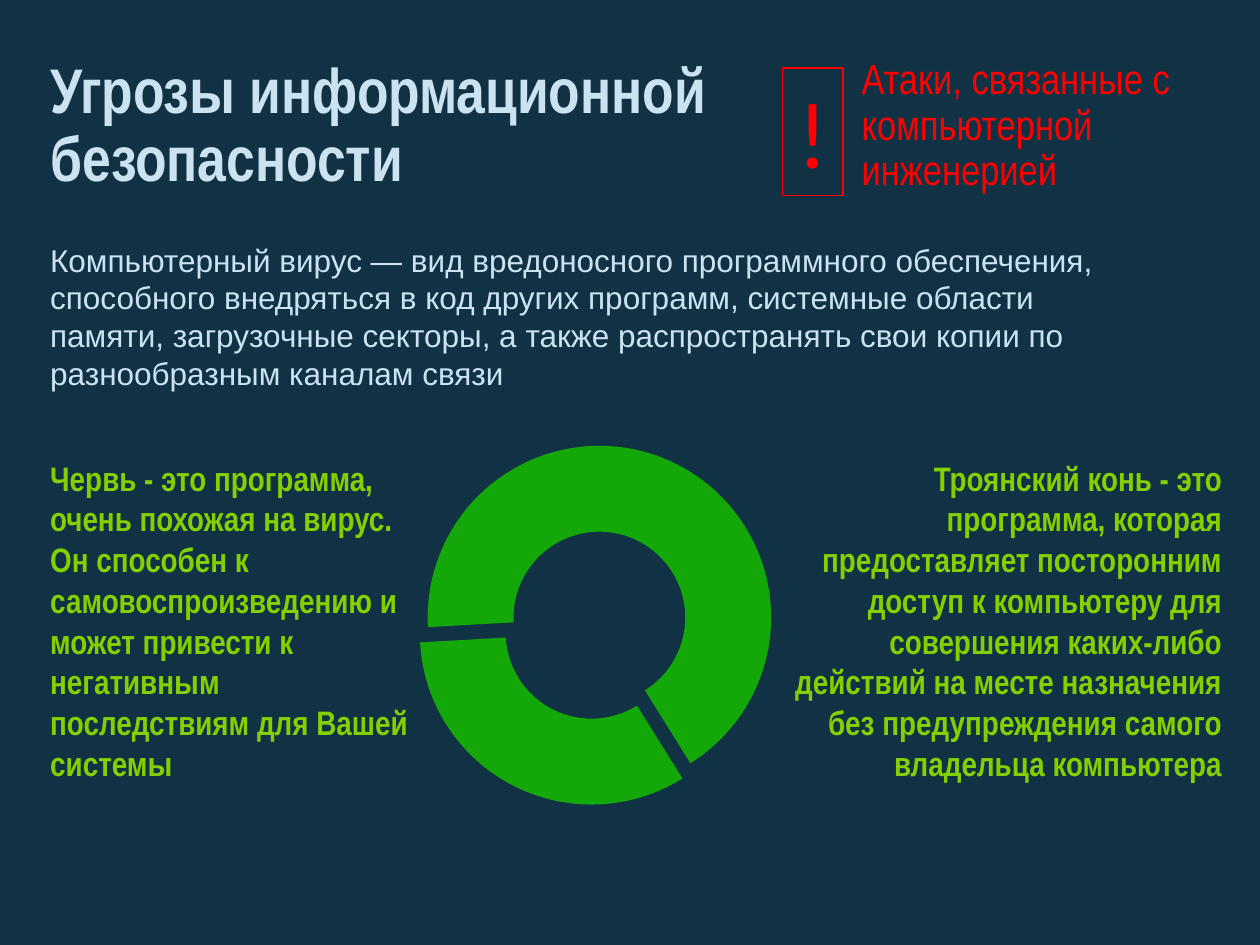
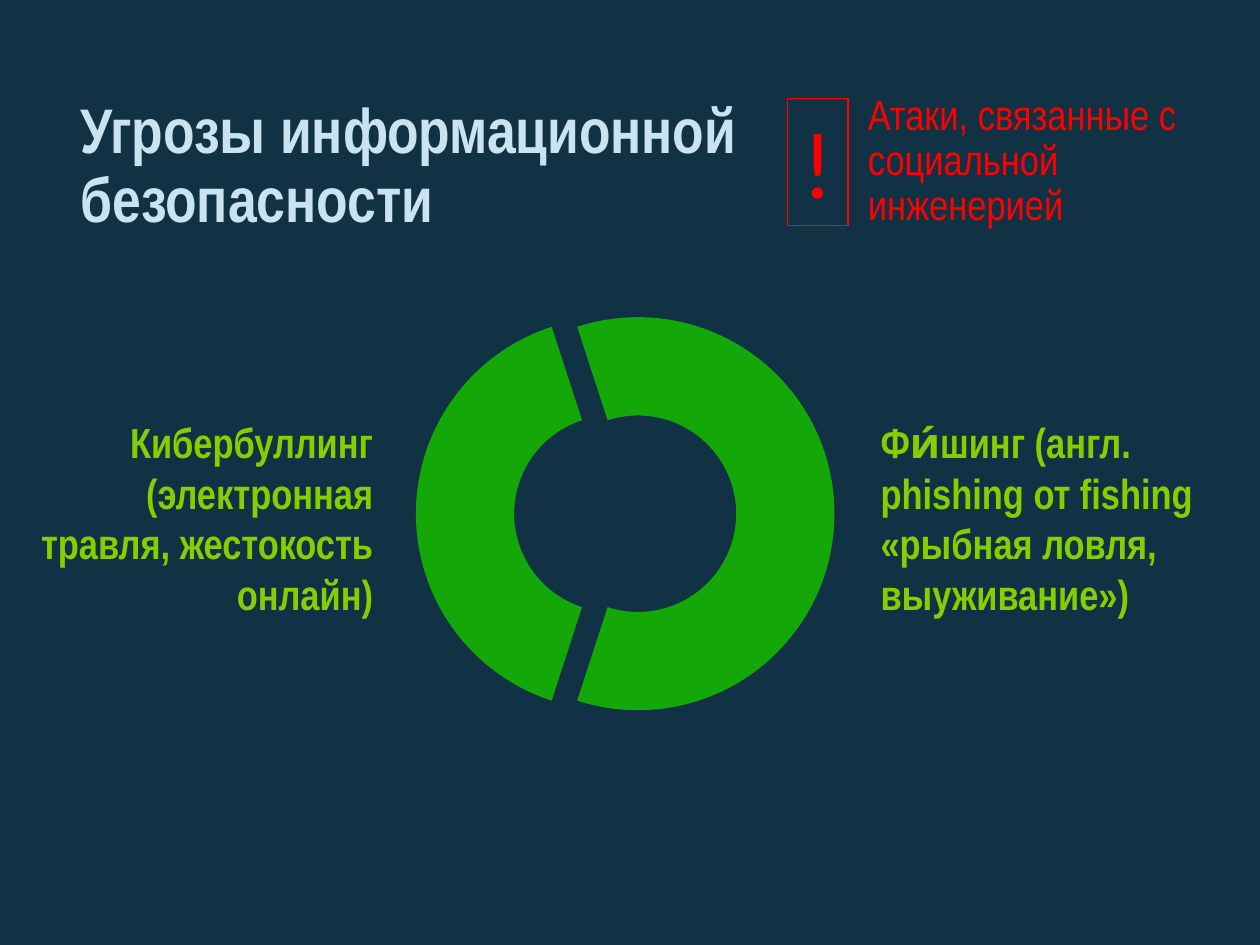
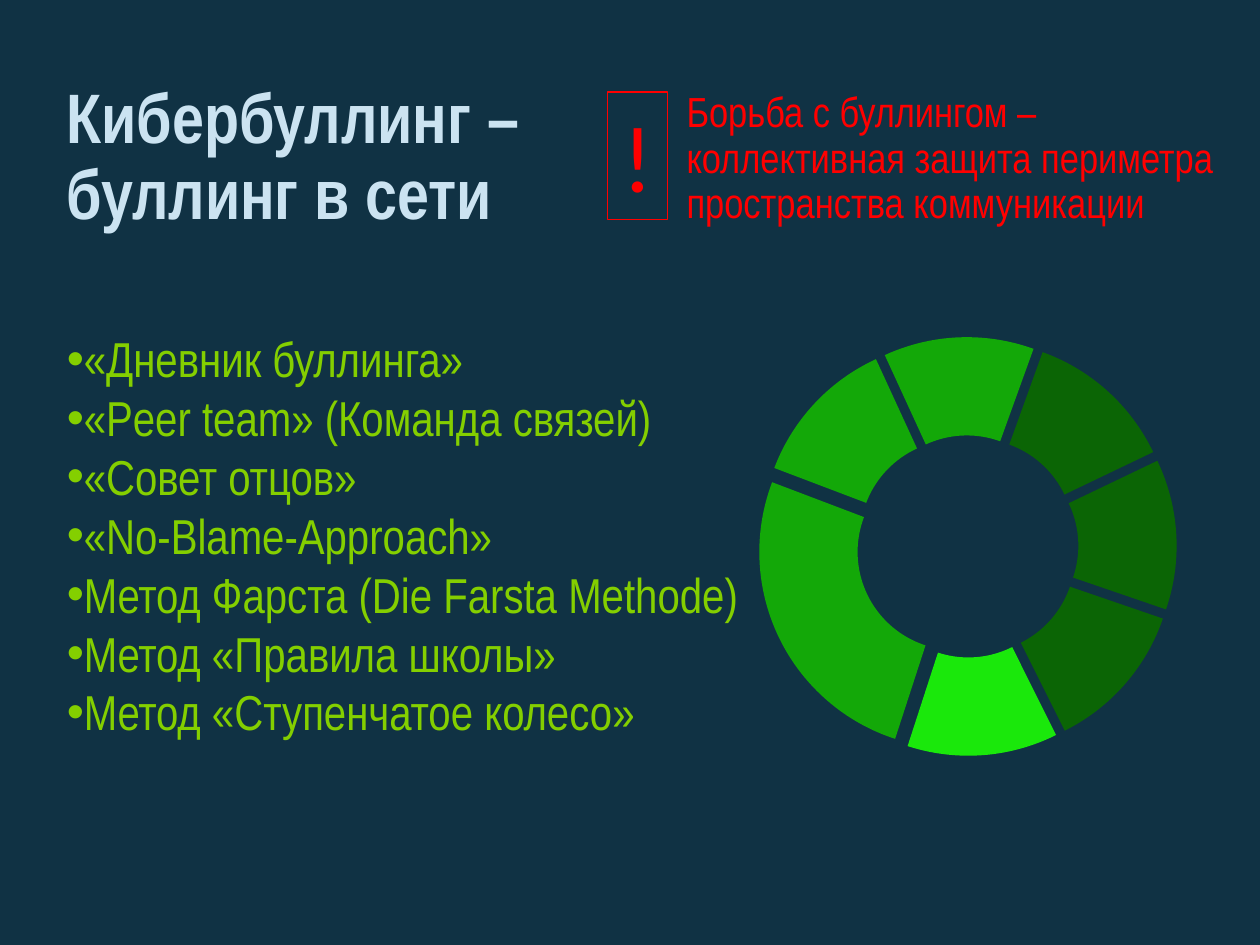
from lxml.etree import SubElement
from pptx import Presentation
from pptx.chart.data import CategoryChartData
from pptx.dml.color import RGBColor
from pptx.enum.chart import XL_CHART_TYPE as ChartType
from pptx.enum.shapes import MSO_SHAPE as Shape
from pptx.enum.text import MSO_ANCHOR as Anchor, MSO_AUTO_SIZE as AutoSize, PP_ALIGN as Align
from pptx.oxml.ns import qn
from pptx.util import Inches, Pt

NAVY = RGBColor(0x10, 0x32, 0x44)
PALE_BLUE = RGBColor(0xCB, 0xE3, 0xF1)
RED = RGBColor(0xFF, 0x00, 0x00)
LIME = RGBColor(0x84, 0xCF, 0x00)
WHITE = RGBColor(0xFF, 0xFF, 0xFF)
GREEN = RGBColor(0x13, 0xA8, 0x08)
DARK_GREEN = RGBColor(0x0B, 0x65, 0x05)
BRIGHT_GREEN = RGBColor(0x1A, 0xE8, 0x0B)

NARROW = "Arial Narrow"
NO_BREAK_SPACE = chr(160)
TITLE_ONLY, TITLE_AND_CONTENT = 5, 1
THREATS = "Угрозы информационной безопасности"

# Boxes are left, top, width, height in inches.
SLIDES = [
    {
        "title": (THREATS, (0.3, 0.42, 5.59, 1.25), 36),
        "notice": ("Атаки, связанные с компьютерной инженерией", (6.45, 0.41, 3.35, 1.19)),
        "mark": (6.21, 0.54),
        "intro": (
            "Компьютерный вирус — вид вредоносного программного обеспечения, "
            "способного внедряться в код других программ, системные области "
            f"памяти,{NO_BREAK_SPACE}загрузочные секторы, а также распространять "
            "свои копии по разнообразным каналам связи",
            (0.3, 1.86, 9.34, 1.31),
        ),
        "definitions": [
            (["Червь - это программа, очень похожая на вирус. Он способен к "
              "самовоспроизведению и может привести к негативным последствиям "
              "для Вашей системы"], (0.3, 3.58, 3.12, 2.71), 19.4, Align.LEFT),
            (["Троянский конь - это программа, которая предоставляет посторонним "
              "доступ к компьютеру для совершения каких-либо действий на месте "
              "назначения без предупреждения самого владельца компьютера"],
             (6.21, 3.58, 3.59, 2.71), 19.4, Align.RIGHT),
        ],
        "ring": {
            "box": (2.78, 3.31, 4.48, 3.27), "plot": (0.115, 0.026),
            "values": [33, 67, None, None],
            "colors": [GREEN, GREEN, GREEN, DARK_GREEN],
            "hole": 49, "start": 148, "explosion": 10,
        },
    },
    {
        "title": (THREATS, (0.54, 0.74, 5.59, 1.25), 36),
        "notice": ("Атаки, связанные с социальной инженерией", (6.5, 0.69, 3.08, 1.19)),
        "mark": (6.25, 0.78),
        "definitions": [
            (["Кибербуллинг (электронная "
              f"травля,{NO_BREAK_SPACE}жестокость онлайн)"],
             (-0.01, 3.26, 3.07, 1.72), 24, Align.RIGHT),
            (["Фи́шинг (англ.", "phishing от fishing", "«рыбная ловля, выуживание»)"],
             (6.89, 3.26, 2.88, 1.72), 24, Align.LEFT),
        ],
        "ring": {
            "box": (2.37, 2.1, 5.2, 3.8), "plot": (0.179, 0.073),
            "values": [40, 60, None, None],
            "colors": [GREEN, GREEN, GREEN, DARK_GREEN],
            "hole": 46, "start": 198, "explosion": 13,
        },
    },
    {
        "title": ("Кибербуллинг –\vбуллинг в сети", (0.43, 0.61, 4.42, 1.25), 40),
        "notice": ("Борьба с буллингом – коллективная защита периметра "
                   "пространства коммуникации", (5.06, 0.67, 4.78, 1.19)),
        "mark": (4.82, 0.73),
        "methods": (
            ["«Дневник буллинга»", "«Peer team» (Команда связей)", "«Совет отцов»",
             "«No-Blame-Approach»", "Метод Фарста (Die Farsta Methode)",
             "Метод «Правила школы»", "Метод «Ступенчатое колесо»"],
            (0.43, 2.56, 5.95, 3.4),
        ),
        "ring": {
            "box": (5.07, 2.36, 5.2, 3.8), "plot": (0.182, 0.062),
            "values": [25] + [12] * 6,
            "colors": [GREEN] * 3 + [DARK_GREEN] * 3 + [BRIGHT_GREEN],
            "hole": 46, "start": 198, "explosion": 13,
        },
    },
]


def place(shape, box):
    shape.left, shape.top, shape.width, shape.height = map(Inches, box)


def write(shape, lines, size, color, name=NARROW, bold=False, align=Align.LEFT,
          spacing=1.0, anchor=Anchor.TOP, indent=None, bullet=None):
    frame = shape.text_frame
    frame.word_wrap = True
    frame.auto_size = AutoSize.NONE
    frame.vertical_anchor = anchor
    frame.text = "\n".join(lines)
    for paragraph in frame.paragraphs:
        paragraph.alignment = align
        paragraph.line_spacing = spacing
        paragraph.space_before = Pt(0)
        properties = paragraph._p.get_or_add_pPr()
        if indent is not None:
            properties.set("marL", str(Inches(indent)))
            properties.set("indent", "0")
        if bullet:
            SubElement(properties, qn("a:buChar"), char=bullet)
        font = paragraph.font
        font.name, font.size, font.bold = name, Pt(size), bold
        font.color.rgb = color


def add_text(slide, lines, box, size, color, **style):
    write(slide.shapes.add_textbox(*map(Inches, box)), lines, size, color, **style)


def add_mark(slide, position):
    mark = slide.shapes.add_shape(Shape.RECTANGLE, *map(Inches, (*position, 0.48, 1.01)))
    mark.shadow.inherit = False
    mark.fill.background()
    mark.line.color.rgb = RED
    mark.line.width = Pt(0.75)
    write(mark, ["!"], 54, RED, name="Calibri", align=Align.CENTER)


def set_plot_layout(chart, position):
    """Pin the inner plot area at a fraction of the chart's size."""
    plot_area = chart._chartSpace.find(".//" + qn("c:plotArea"))
    for old_layout in plot_area.findall(qn("c:layout")):
        plot_area.remove(old_layout)
    layout = SubElement(plot_area, qn("c:layout"))
    plot_area.insert(0, layout)
    manual = SubElement(layout, qn("c:manualLayout"))
    settings = {"layoutTarget": "inner", "xMode": "edge", "yMode": "edge",
                "x": position[0], "y": position[1], "w": 0.639, "h": 0.959}
    for tag, value in settings.items():
        SubElement(manual, qn("c:" + tag), val=str(value))


def add_ring(slide, ring):
    data = CategoryChartData()
    data.categories = [str(number + 1) for number in range(len(ring["values"]))]
    data.add_series("Series 1", ring["values"])
    chart = slide.shapes.add_chart(
        ChartType.DOUGHNUT, *map(Inches, ring["box"]), data).chart
    chart.has_title = False
    chart.has_legend = False
    chart.font.name, chart.font.size = "Calibri", Pt(10)
    chart.font.color.rgb = WHITE
    set_plot_layout(chart, ring["plot"])

    plot = chart.plots[0]
    plot.vary_by_categories = True
    plot.has_data_labels = False
    doughnut = plot._element
    for tag, key in (("c:firstSliceAng", "start"), ("c:holeSize", "hole")):
        doughnut.find(qn(tag)).set("val", str(ring[key]))

    series = plot.series[0]
    title = series._element.find(qn("c:tx"))
    explosion = SubElement(series._element, qn("c:explosion"), val=str(ring["explosion"]))
    title.addnext(explosion)
    for index, color in enumerate(ring["colors"]):
        slice_format = series.points[index].format
        slice_format.fill.solid()
        slice_format.fill.fore_color.rgb = color
        slice_format.line.fill.background()


def build_slide(presentation, content):
    layout = TITLE_AND_CONTENT if "methods" in content else TITLE_ONLY
    slide = presentation.slides.add_slide(presentation.slide_layouts[layout])
    add_ring(slide, content["ring"])

    title, box, size = content["title"]
    place(slide.shapes.title, box)
    write(slide.shapes.title, [title], size, PALE_BLUE, bold=True, spacing=0.9)

    notice, box = content["notice"]
    add_text(slide, [notice], box, 24, RED, spacing=0.9, anchor=Anchor.MIDDLE, indent=0.29)
    add_mark(slide, content["mark"])

    if "intro" in content:
        intro, box = content["intro"]
        add_text(slide, [intro], box, 18, PALE_BLUE, name="Arial")
    for lines, box, size, align in content.get("definitions", []):
        add_text(slide, lines, box, size, LIME, bold=True, align=align)
    if "methods" in content:
        methods, box = content["methods"]
        body = slide.placeholders[1]
        place(body, box)
        write(body, methods, 28, LIME, indent=0, bullet="•")


def main():
    presentation = Presentation()
    presentation.slide_width, presentation.slide_height = Inches(10), Inches(7.5)
    background = presentation.slide_master.background.fill
    background.solid()
    background.fore_color.rgb = NAVY
    for content in SLIDES:
        build_slide(presentation, content)
    presentation.save("out.pptx")


if __name__ == "__main__":
    main()
